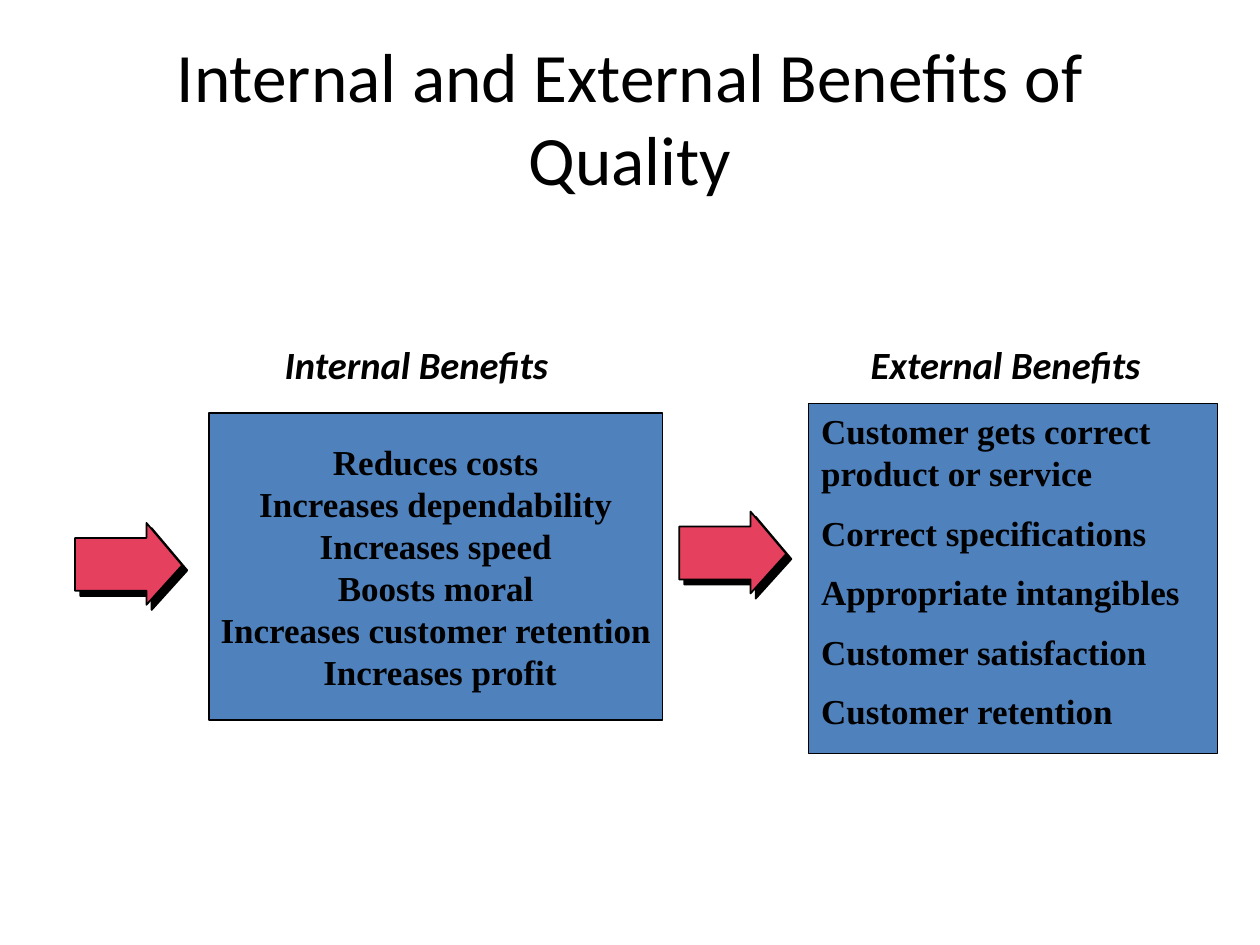
from dataclasses import dataclass

from lxml.etree import SubElement
from pptx import Presentation
from pptx.dml.color import RGBColor
from pptx.enum.text import MSO_ANCHOR, MSO_AUTO_SIZE, PP_ALIGN
from pptx.oxml.ns import qn
from pptx.util import Pt

BLACK = RGBColor(0x00, 0x00, 0x00)
BLUE = RGBColor(0x4F, 0x81, 0xBD)
RED = RGBColor(0xE5, 0x40, 0x5D)

# Text formats
TITLE = {"name": "Calibri", "size": Pt(39.6)}
HEAD = {"name": "Calibri", "size": Pt(22), "bold": True, "italic": True}
ITEM = {"name": "Times New Roman", "size": Pt(20), "bold": True}

# Arrow outline, relative to its top left corner
ARROW = [(0, 8.6), (40.8, 8.6), (40.8, 0), (61.2, 24.2),
         (40.8, 46.8), (40.8, 38.8), (0, 38.8)]


@dataclass
class Block:
    slot: int
    box: tuple[float, float, float, float]
    lines: list[str]
    style: dict
    align: PP_ALIGN = PP_ALIGN.LEFT
    anchor: MSO_ANCHOR = MSO_ANCHOR.TOP
    gap: float = 0
    inset: float = 7.2
    edge: float = 0


BLOCKS = [
    Block(0, (36, 21.6, 648, 90), ["Internal and External Benefits of Quality"],
          TITLE, PP_ALIGN.CENTER, MSO_ANCHOR.MIDDLE),
    Block(1, (155.5, 191.5, 187.2, 33.1), ["Internal Benefits"], HEAD),
    Block(2, (119.4, 236.1, 259.2, 175.5),
          ["Reduces costs", "Increases dependability", "Increases speed",
           "Boosts moral", "Increases customer retention", " Increases profit"],
          ITEM, PP_ALIGN.CENTER, MSO_ANCHOR.MIDDLE, inset=3.6, edge=1),
    Block(3, (490.3, 191.5, 194.4, 33.1), ["External Benefits"], HEAD),
    Block(4, (462, 230.4, 233.8, 200),
          ["Customer gets correct product or service", "Correct specifications",
           "Appropriate intangibles", "Customer satisfaction",
           "Customer retention"],
          ITEM, gap=10, edge=0.75),
]


def fill_slot(slide, block: Block) -> None:
    shape = slide.placeholders[block.slot]
    for key, val in zip(("left", "top", "width", "height"), block.box):
        setattr(shape, key, Pt(val))
    if block.edge:
        shape.fill.solid()
        shape.fill.fore_color.rgb = BLUE
        shape.line.color.rgb = BLACK
        shape.line.width = Pt(block.edge)
    frame = shape.text_frame
    form = {"word_wrap": True, "auto_size": MSO_AUTO_SIZE.NONE,
            "vertical_anchor": block.anchor,
            "margin_left": Pt(block.inset), "margin_right": Pt(block.inset),
            "margin_top": Pt(3.6), "margin_bottom": Pt(3.6)}
    for key, val in form.items():
        setattr(frame, key, val)
    for num, line in enumerate(block.lines):
        para = frame.add_paragraph() if num else frame.paragraphs[0]
        # No bullet and no indent
        props = para._p.get_or_add_pPr()
        props.set("marL", "0")
        props.set("indent", "0")
        SubElement(props, qn("a:buNone"))
        para.alignment = block.align
        para.space_before = Pt(block.gap if num else 0)
        run = para.add_run()
        run.text = line
        for key, val in block.style.items():
            setattr(run.font, key, val)
        run.font.color.rgb = BLACK


def add_arrow(slide, left: float, top: float) -> None:
    spots = [(Pt(left + x), Pt(top + y)) for x, y in ARROW]
    pen = slide.shapes.build_freeform(*spots[0])
    pen.add_line_segments(spots[1:], close=True)
    shape = pen.convert_to_shape()
    shape.fill.solid()
    shape.fill.fore_color.rgb = RED
    shape.line.color.rgb = BLACK
    shape.line.width = Pt(1)
    # Hard black shadow, down and to the right
    shape.shadow.inherit = False
    effects = shape._element.spPr.find(qn("a:effectLst"))
    shade = SubElement(effects, qn("a:outerShdw"), dist=str(Pt(4.2)),
                       dir="2700000", algn="ctr", rotWithShape="0")
    SubElement(shade, qn("a:srgbClr"), val=str(BLACK))


def main() -> None:
    deck = Presentation()
    deck.slide_width, deck.slide_height = Pt(720), Pt(540)
    slide = deck.slides.add_slide(deck.slide_layouts.get_by_name("Comparison"))
    # Title, headings and lists
    for block in BLOCKS:
        fill_slot(slide, block)
    # Arrows leading into each list
    for left, top in ((388.1, 292.3), (42.9, 298.8)):
        add_arrow(slide, left, top)
    deck.save("out.pptx")


if __name__ == "__main__":
    main()
